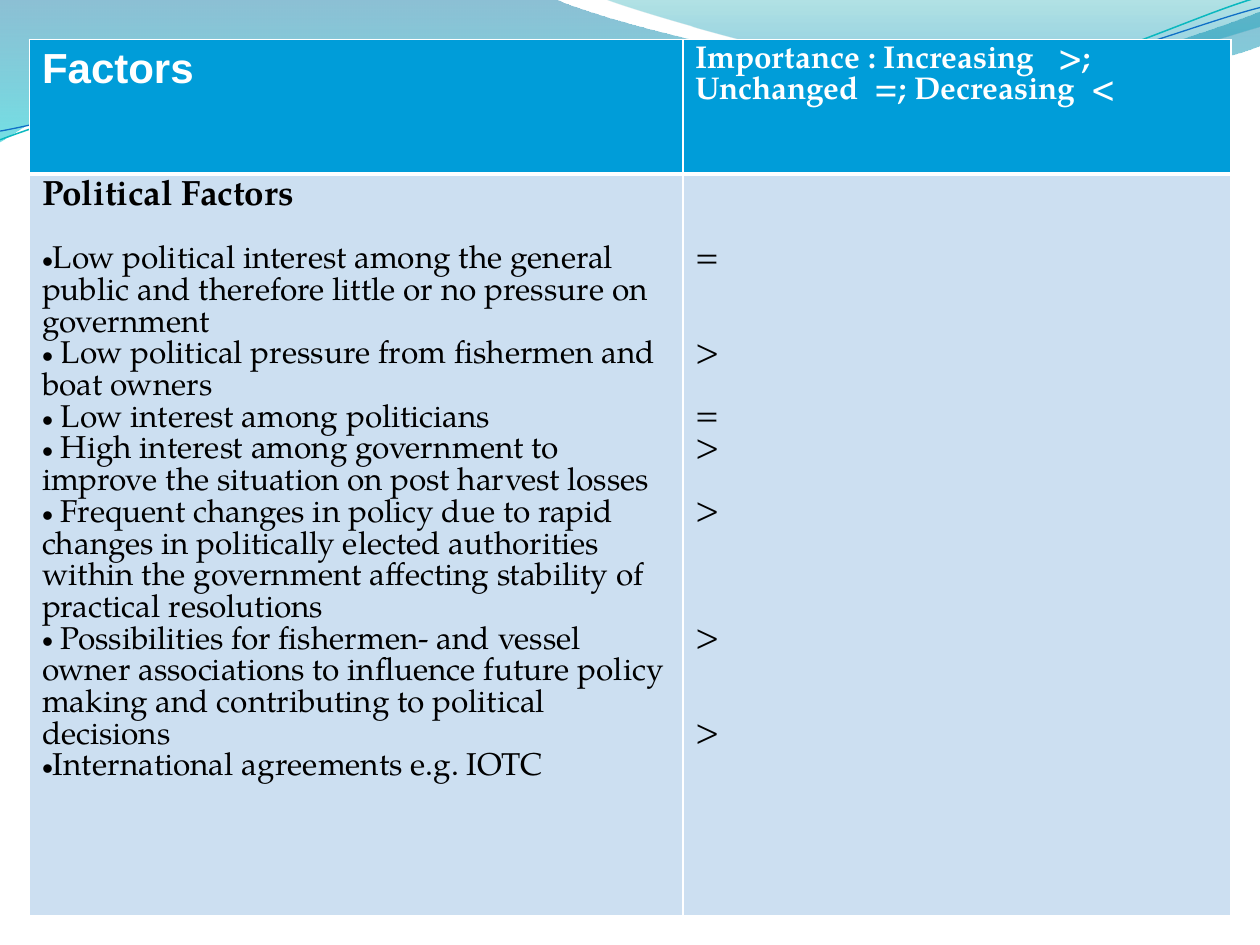
from dataclasses import dataclass

from lxml.etree import SubElement
from pptx import Presentation
from pptx.dml.color import RGBColor
from pptx.oxml.ns import qn
from pptx.util import Pt


@dataclass(frozen=True)
class Theme:
    """Colours, fonts and type sizes of the slide."""
    white: str = "FFFFFF"
    black: str = "000000"
    header: str = "009DD9"
    body: str = "CCDFF1"
    deep_blue: str = "0074A1"
    cyan: str = "00C6CF"
    teal: str = "00A1A9"
    mid_blue: str = "008BBF"
    teal_line: str = "0AB8BF"
    blue_line: str = "0F6FC6"
    serif: str = "TeX Gyre Pagella"
    sans: str = "Arial"
    title_size: float = 24
    heading_size: float = 20
    text_size: float = 18
    line_pitch: float = 18.1
    heading_pitch: float = 20.1


THEME = Theme()
TITLE_INSET = 3.6
TEXT_INSET = 2.9
RATING_INSET = TEXT_INSET + THEME.heading_pitch + THEME.line_pitch - 0.8

UPPER_WAVE = [
    (0, 0), (316.8, -0.7),
    (342.7, 12.2, 478.1, 45.4, 545.8, 45.4), (614.2, 45.4, 689.8, 18.7, 720, 6.5),
    (720.7, 25.9),
    (707.8, 31.7, 626.4, 54.7, 537.1, 54), (447.8, 54, 275, 20.2, 185, 24.5),
    (92.9, 25.9, 33.1, 59.8, -0.7, 81.4), (0, 0),
]
RIGHT_WAVE = [
    (344.9, -0.7),
    (366.5, 7.9, 491, 44.6, 553.7, 46.8), (616.3, 49.7, 691.9, 23, 720, 15.1),
    (720, 0), (344.9, -0.7),
]
TEAL_CURVE = [
    (0, 79.9), (34.6, 67, 113.8, 41, 199.4, 37.4),
    (284.4, 33.8, 427, 64.1, 513.4, 57.6), (599.8, 51.1, 675.4, 10.8, 718.6, -1.4),
]
BLUE_CURVE = [
    (0, 74.9), (33.8, 69.1, 118.1, 43.9, 203.8, 40.3),
    (290.2, 36.7, 429.8, 60.5, 516.2, 54), (601.9, 48.2, 677.5, 15.1, 720, 4.3),
]

POLITICAL_FACTORS = [
    "Low political interest among the general public and therefore little or no pressure on government",
    " Low political pressure from fishermen and boat owners",
    " Low interest among politicians",
    " High interest among government to improve the situation on post harvest losses",
    " Frequent changes in policy due to rapid changes in politically elected authorities "
    "within the government affecting stability of practical resolutions",
    " Possibilities for fishermen- and vessel owner associations to influence future policy "
    "making and contributing to political decisions",
    "International agreements e.g. IOTC",
]
IMPORTANCE = [("=", 0), (">", 2), ("=", 1), (">", 0), (">", 1), (">", 3), (">", 2)]


def write_text(frame, text, first=False, size=THEME.text_size, font=THEME.serif,
               color=THEME.black, bold=False, pitch=None, before=0, bullet=False, gap=0):
    """Write one paragraph; a vertical bar marks a space widened by gap."""
    paragraph = frame.paragraphs[0] if first else frame.add_paragraph()
    paragraph.space_before = Pt(before)
    if pitch:
        paragraph.line_spacing = Pt(pitch)
    if bullet:
        properties = paragraph._p.get_or_add_pPr()
        properties.set("marL", "0")
        properties.set("indent", "0")
        SubElement(properties, qn("a:buFont")).set("typeface", THEME.sans)
        SubElement(properties, qn("a:buChar")).set("char", "•")
    for part in text.replace("|", "\n \n").split("\n"):
        run = paragraph.add_run()
        run.text = part
        run.font.size = Pt(size)
        run.font.name = font
        run.font.bold = bold
        run.font.color.rgb = RGBColor.from_string(color)
        if part == " ":
            run.font._element.set("spc", str(round(gap * 100)))


class SlideBuilder:
    """Holds the theme and the current slide."""

    def __init__(self, slide, theme):
        self.slide = slide
        self.theme = theme

    def outline(self, steps, close):
        """Add a freeform whose six-number steps are cubic curves."""
        points = [(Pt(x), Pt(y)) for step in steps for x, y in zip(step[::2], step[1::2])]
        builder = self.slide.shapes.build_freeform(*points[0])
        builder.add_line_segments(points[1:], close=close)
        shape = builder.convert_to_shape()
        shape.shadow.inherit = False
        segments = iter(shape._element.xpath(".//a:path/a:lnTo"))
        for step in steps[1:]:
            segment = next(segments)
            if len(step) == 6:
                segment.tag = qn("a:cubicBezTo")
                for _ in range(2):
                    extra = next(segments)
                    segment.append(extra[0])
                    extra.getparent().remove(extra)
        return shape

    def wave(self, steps, stops):
        """Add a filled wave with a translucent vertical gradient."""
        shape = self.outline(steps, close=True)
        shape.line.fill.background()
        shape.fill.gradient()
        shape.fill.gradient_angle = 270
        for stop, (position, color, _) in zip(shape.fill.gradient_stops, stops):
            stop.position = position
            stop.color.rgb = RGBColor.from_string(color)
        for element, (_, _, opacity) in zip(shape._element.xpath(".//a:gs/a:srgbClr"), stops):
            SubElement(element, qn("a:alpha")).set("val", str(opacity * 1000))

    def curve(self, steps, color, width):
        """Add an open curved line."""
        shape = self.outline(steps, close=False)
        shape.fill.background()
        shape.line.color.rgb = RGBColor.from_string(color)
        shape.line.width = Pt(width)

    def table(self, left, top, columns, rows):
        """Add a plain table with the given column widths and row heights."""
        frame = self.slide.shapes.add_table(
            len(rows), len(columns), Pt(left), Pt(top), Pt(sum(columns)), Pt(sum(rows)))
        table = frame.table
        table.first_row = table.horz_banding = False
        for column, width in zip(table.columns, columns):
            column.width = Pt(width)
        for row, height in zip(table.rows, rows):
            row.height = Pt(height)
        return table

    def cell(self, cell, fill, bottom=1, inset=TEXT_INSET):
        """Style a cell and return its text frame."""
        cell.margin_top = Pt(inset)
        cell.fill.solid()
        cell.fill.fore_color.rgb = RGBColor.from_string(fill)
        properties = cell._tc.get_or_add_tcPr()
        for index, side in enumerate("LRTB"):
            width = bottom if side == "B" else 1
            border = SubElement(properties, qn(f"a:ln{side}"), w=str(Pt(width)))
            solid = SubElement(border, qn("a:solidFill"))
            SubElement(solid, qn("a:srgbClr")).set("val", self.theme.white)
            properties.insert(index, border)
        return cell.text_frame


def main():
    """Build and save the slide."""
    presentation = Presentation()
    presentation.slide_width, presentation.slide_height = Pt(720), Pt(540)
    slide = presentation.slides.add_slide(presentation.slide_layouts[6])
    builder = SlideBuilder(slide, THEME)

    builder.wave(UPPER_WAVE, [(0, THEME.deep_blue, 45), (1, THEME.cyan, 55)])
    builder.wave(RIGHT_WAVE, [(0, THEME.teal, 30), (0.8, THEME.mid_blue, 45)])
    builder.curve(TEAL_CURVE, THEME.teal_line, 0.85)
    builder.curve(BLUE_CURVE, THEME.blue_line, 0.75)

    table = builder.table(16.8, 22.6, columns=(373.5, 313.2), rows=(76.8, 423.9))
    header = builder.cell(table.cell(0, 0), THEME.header, bottom=3, inset=TITLE_INSET)
    write_text(header, "Factors", first=True, size=THEME.title_size, font=THEME.sans,
               color=THEME.white, bold=True)

    legend = builder.cell(table.cell(0, 1), THEME.header, bottom=3)
    legend_format = dict(color=THEME.white, bold=True, pitch=THEME.line_pitch)
    write_text(legend, "Importance : Increasing|>;", first=True, gap=9, **legend_format)
    write_text(legend, "Unchanged|=; Decreasing|<", gap=4.5, **legend_format)

    factors = builder.cell(table.cell(1, 0), THEME.body)
    write_text(factors, "Political Factors", first=True, size=THEME.heading_size, bold=True,
               pitch=THEME.heading_pitch)
    for index, factor in enumerate(POLITICAL_FACTORS):
        write_text(factors, factor, pitch=THEME.line_pitch, bullet=True,
                   before=0 if index else THEME.line_pitch)

    ratings = builder.cell(table.cell(1, 1), THEME.body, inset=RATING_INSET)
    for index, (sign, skipped_lines) in enumerate(IMPORTANCE):
        write_text(ratings, sign, first=index == 0, pitch=THEME.line_pitch,
                   before=skipped_lines * THEME.line_pitch)

    presentation.save("out.pptx")


if __name__ == "__main__":
    main()
